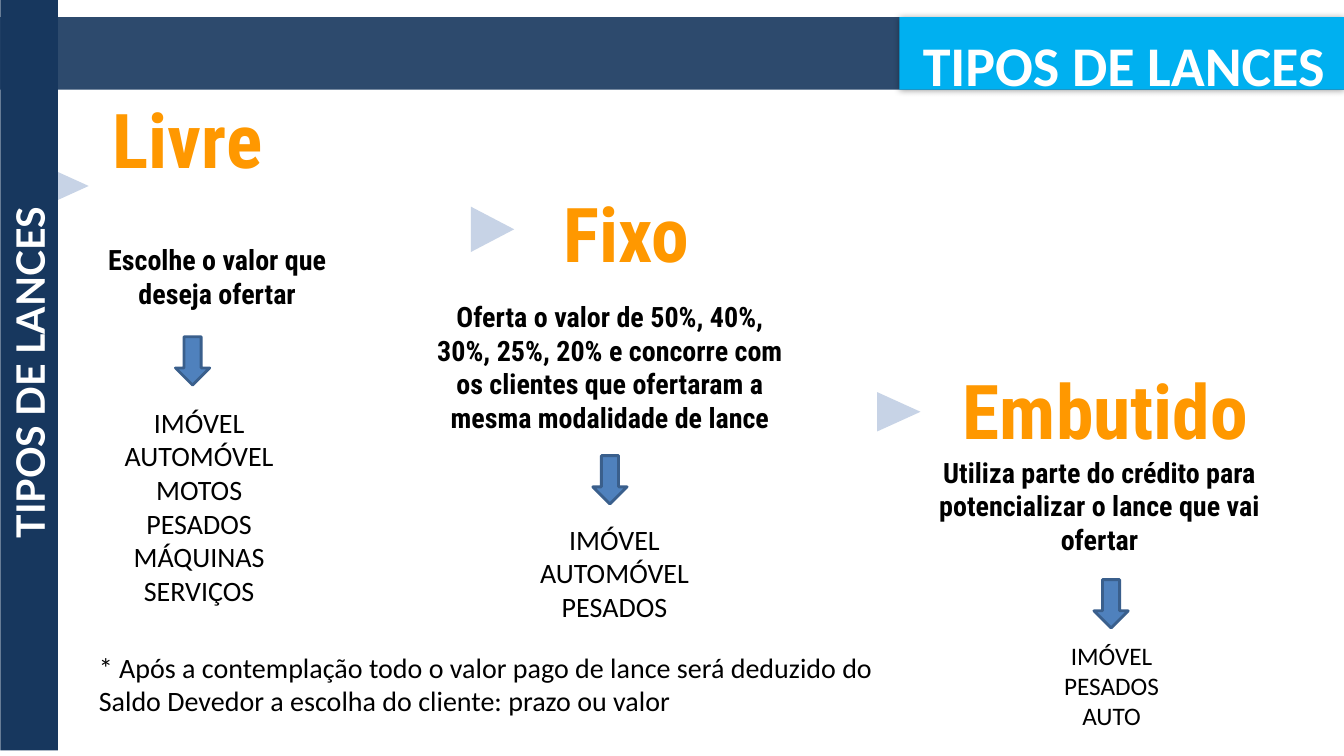
"""Build the slide on bid types: three stepped columns beneath a title band."""
from dataclasses import dataclass

from lxml import etree
from pptx import Presentation
from pptx.dml.color import RGBColor
from pptx.enum.shapes import MSO_SHAPE
from pptx.enum.text import MSO_ANCHOR, MSO_AUTO_SIZE, PP_ALIGN
from pptx.oxml.ns import qn
from pptx.util import Inches, Pt

RECTANGLE = MSO_SHAPE.RECTANGLE
DOWN_ARROW = MSO_SHAPE.DOWN_ARROW
TRIANGLE = MSO_SHAPE.FLOWCHART_EXTRACT
TOP, MIDDLE = MSO_ANCHOR.TOP, MSO_ANCHOR.MIDDLE
LEFT, CENTER = PP_ALIGN.LEFT, PP_ALIGN.CENTER
NO_FIT = MSO_AUTO_SIZE.NONE

HEADLINE = "TIPOS DE LANCES"
NOTE = ("* Após a contemplação todo o valor pago de lance será deduzido do "
        "Saldo Devedor a escolha do cliente: prazo ou valor")
BIDS = [
    dict(name="Livre", name_box=(5.7, 9.4, 25.8, 8.7),
         text="Escolhe o valor que deseja ofertar", text_box=(7.2, 22.4, 28.7, 10),
         goods=["IMÓVEL AUTOMÓVEL", "MOTOS", "PESADOS", "MÁQUINAS", "SERVIÇOS"],
         goods_box=(8.8, 39.7, 21.9, 21.2), goods_size=20,
         arrow=(17.4, 33.4), marker=(4.7, 16.3, 3.9)),
    dict(name="Fixo", name_box=(48.4, 18.5, 27.5, 9.1),
         text="Oferta o valor de 50%, 40%, 30%, 25%, 20% e concorre com "
              "os clientes que ofertaram a mesma modalidade de lance",
         text_box=(41.8, 27.6, 37.4, 17.6),
         goods=["IMÓVEL", "AUTOMÓVEL", "PESADOS"],
         goods_box=(48.9, 51.3, 24.1, 11.1), goods_size=20,
         arrow=(58.8, 45.2), marker=(46.6, 20.6, 4.5)),
    dict(name="Embutido", name_box=(88.7, 36.7, 41.9, 7.8),
         text="Utiliza parte do crédito para potencializar o lance que vai ofertar",
         text_box=(89.6, 42.8, 38.9, 14.7),
         goods=["IMÓVEL", "PESADOS", "AUTO"],
         goods_box=(96, 63, 28.5, 10.1), goods_size=18,
         arrow=(108.5, 57.5), marker=(87.2, 38.7, 3.9)),
]

COLUMNS, ROWS = 133.3, 75
CELL = Inches(7.5) / ROWS
BAND_TOP, BAND_HEIGHT = 1.7, 7.2
TITLE_LEFT = 89.2
TITLE_BOX = (89.6, 2.5, 43.7, 7.7)
NOTE_BOX = (8.8, 64, 79.9, 7.7)
SIDEBAR_BOX = (-34.6, 34.1, ROWS, 5.7)
ARROW_SIZE = (3.4, 4.8)
MARKER_HEIGHT = 4.3


@dataclass(frozen=True)
class Theme:
    """Colours, fonts and type sizes."""
    navy: str = "17375E"
    cyan: str = "00B0F0"
    blue: str = "4F81BD"
    blue_edge: str = "3A5F8C"
    pale: str = "C7D3E6"
    orange: str = "FF9800"
    black: str = "000000"
    white: str = "FFFFFF"
    plain: str = "Calibri"
    condensed: str = "Roboto Condensed"
    side: str = "Lato"
    title_size: int = 40
    side_size: int = 28
    name_size: int = 54
    text_size: int = 20


THEME = Theme()


def place(shape, box):
    shape.left, shape.top, shape.width, shape.height = (round(n * CELL) for n in box)


def add_figure(slide, kind, box, color, edge=None, rotation=0):
    shape = slide.shapes.add_shape(kind, 0, 0, 0, 0)
    place(shape, box)
    shape.rotation = rotation
    shape.shadow.inherit = False
    shape.fill.solid()
    shape.fill.fore_color.rgb = RGBColor.from_string(color)
    if edge:
        shape.line.color.rgb = RGBColor.from_string(edge)
        shape.line.width = Pt(2)
    else:
        shape.line.fill.background()
    return shape


def write(shape, lines, size, font, color, bold=False, align=CENTER, anchor=TOP, inset=0.05):
    frame = shape.text_frame
    frame.word_wrap = True
    frame.auto_size = NO_FIT
    frame.vertical_anchor = anchor
    frame.margin_left = frame.margin_right = Inches(0.1)
    frame.margin_top = frame.margin_bottom = Inches(inset)
    for index, line in enumerate(lines):
        paragraph = frame.add_paragraph() if index else frame.paragraphs[0]
        paragraph.alignment = align
        paragraph.space_before = paragraph.space_after = Pt(0)
        properties = paragraph._p.get_or_add_pPr()
        properties.set("marL", "0")
        properties.set("indent", "0")
        etree.SubElement(properties, qn("a:buNone"))
        run = paragraph.add_run()
        run.text = line
        run.font.size, run.font.name, run.font.bold = Pt(size), font, bold
        run.font.color.rgb = RGBColor.from_string(color)


def add_label(slide, box, text, size, color):
    label = slide.shapes.add_textbox(0, 0, 0, 0)
    place(label, box)
    write(label, [text], size, THEME.condensed, color, bold=True, anchor=MIDDLE, inset=0.1)


def set_alpha(color_element, percent):
    etree.SubElement(color_element, qn("a:alpha")).set("val", str(percent * 1000))


def add_glow_shadow(shape):
    effects = shape._element.spPr.find(qn("a:effectLst"))
    shadow = etree.SubElement(effects, qn("a:outerShdw"), blurRad=str(Pt(5)), dist="0")
    color = etree.SubElement(shadow, qn("a:srgbClr"), val=THEME.black)
    set_alpha(color, 40)


def add_header(slide):
    band = add_figure(slide, RECTANGLE, (0, BAND_TOP, COLUMNS, BAND_HEIGHT), THEME.navy)
    set_alpha(band._element.spPr.find(".//" + qn("a:srgbClr")), 90)
    panel = add_figure(slide, RECTANGLE,
                       (TITLE_LEFT, BAND_TOP, COLUMNS - TITLE_LEFT, BAND_HEIGHT), THEME.cyan)
    add_glow_shadow(panel)
    title = slide.shapes.title
    place(title, TITLE_BOX)
    write(title, [HEADLINE], THEME.title_size, THEME.plain, THEME.white, bold=True)
    slide.shapes._spTree.append(title._element)


def add_bid(slide, bid, goods_holder):
    place(goods_holder, bid["goods_box"])
    write(goods_holder, bid["goods"], bid["goods_size"], THEME.plain, THEME.black)
    add_figure(slide, DOWN_ARROW, bid["arrow"] + ARROW_SIZE, THEME.blue, THEME.blue_edge)
    add_label(slide, bid["text_box"], bid["text"], THEME.text_size, THEME.black)
    add_label(slide, bid["name_box"], bid["name"], THEME.name_size, THEME.orange)
    left, top, width = bid["marker"]
    add_figure(slide, TRIANGLE, (left, top, width, MARKER_HEIGHT), THEME.pale, rotation=90)


def main():
    presentation = Presentation()
    presentation.slide_width = round(COLUMNS * CELL)
    presentation.slide_height = round(ROWS * CELL)
    slide = presentation.slides.add_slide(presentation.slide_layouts[4])
    *goods_holders, note = list(slide.placeholders)[1:]
    add_header(slide)
    for bid, holder in zip(BIDS, goods_holders):
        add_bid(slide, bid, holder)
    place(note, NOTE_BOX)
    write(note, [NOTE], THEME.text_size, THEME.plain, THEME.black, align=LEFT)
    sidebar = add_figure(slide, RECTANGLE, SIDEBAR_BOX, THEME.navy, rotation=270)
    write(sidebar, [HEADLINE], THEME.side_size, THEME.side, THEME.white, bold=True, anchor=MIDDLE)
    presentation.save("out.pptx")


if __name__ == "__main__":
    main()
